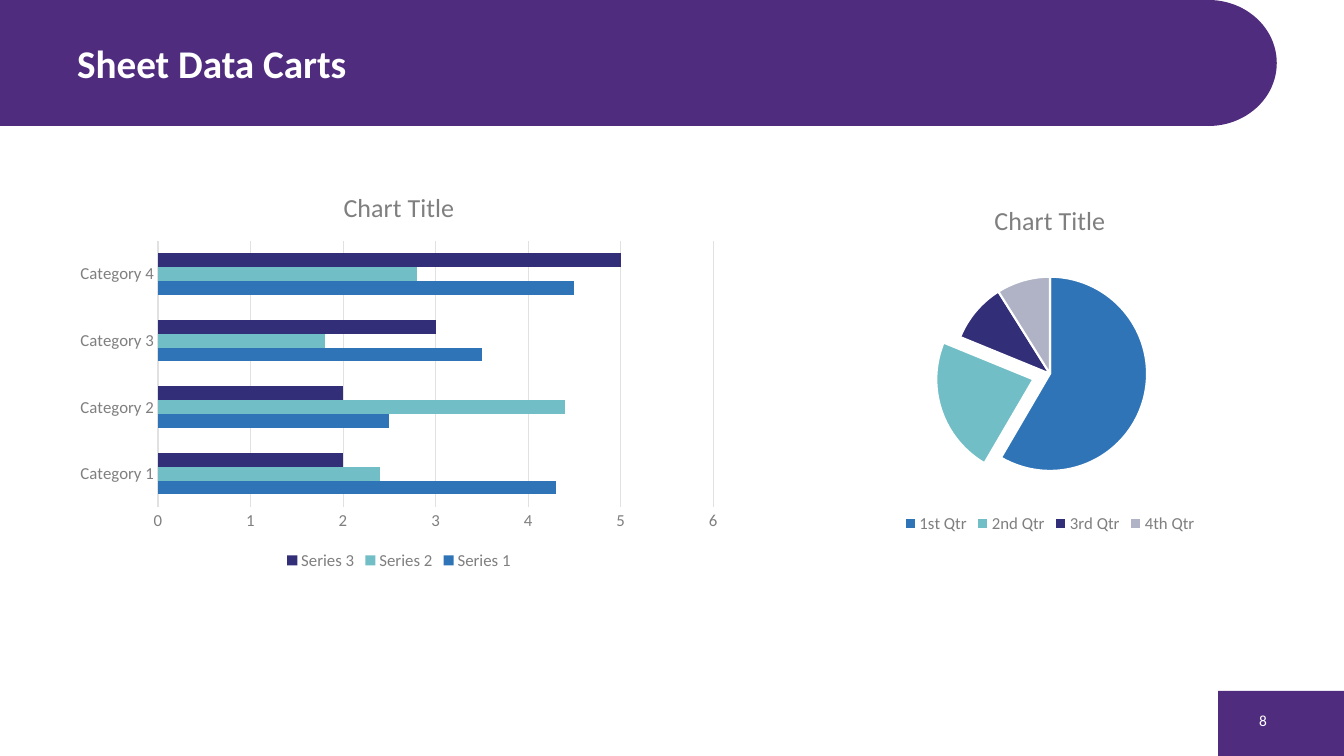
from lxml import etree
from pptx import Presentation
from pptx.chart.data import CategoryChartData
from pptx.dml.color import RGBColor
from pptx.enum.chart import XL_CHART_TYPE as ChartType
from pptx.enum.chart import XL_LEGEND_POSITION as LegendPosition
from pptx.enum.chart import XL_TICK_MARK as TickMark
from pptx.enum.shapes import MSO_SHAPE as Shape
from pptx.enum.text import MSO_ANCHOR as Anchor
from pptx.enum.text import PP_ALIGN as Align
from pptx.oxml.ns import qn
from pptx.util import Emu, Pt

PX = 9525
FONT = "Calibri"
COLORS = {
    "purple": "502C7F",
    "white": "FFFFFF",
    "gray": "7F7F7F",
    "grid": "E1E1E1",
    "blue": "2F74B7",
    "teal": "71BEC6",
    "navy": "322E78",
    "silver": "AFB3C5",
}
PALETTE = ("blue", "teal", "navy", "silver")


def px(*lengths):
    return [Emu(length * PX) for length in lengths]


def color(name):
    return RGBColor.from_string(COLORS[name])


def style_font(font, size, color_name, bold=False):
    values = {"name": FONT, "size": Pt(size), "bold": bold}
    for attribute, value in values.items():
        setattr(font, attribute, value)
    font.color.rgb = color(color_name)


def fill_format(item, color_name):
    item.fill.solid()
    item.fill.fore_color.rgb = color(color_name)


def style_line(line, color_name, width):
    line.color.rgb = color(color_name)
    line.width = Pt(width)


def add_block(slide, kind, box):
    shape = slide.shapes.add_shape(kind, *px(*box))
    shape.shadow.inherit = False
    fill_format(shape, "purple")
    shape.line.fill.background()


def add_label(slide, text, box, size, align, bold=False):
    frame = slide.shapes.add_textbox(*px(*box)).text_frame
    frame.word_wrap = True
    frame.vertical_anchor = Anchor.MIDDLE
    paragraph = frame.paragraphs[0]
    paragraph.text = text
    paragraph.alignment = align
    style_font(paragraph.font, size, "white", bold)


def add_header(slide, title, box):
    left, top, width, height = box
    cap = 130
    add_block(slide, Shape.RECTANGLE, (left, top, width - cap // 2, height))
    add_block(slide, Shape.OVAL, (left + width - cap, top, cap, height))
    add_label(slide, title, (left + 64, top + 8, 960, height - 16), 28, Align.LEFT, True)


def add_page_number(slide, number, box):
    left, top, width, height = box
    add_block(slide, Shape.RECTANGLE, box)
    add_label(slide, number, (left + 8, top + 9, 48, 38), 11, Align.RIGHT)


def add_titled_chart(slide, kind, categories, series, box):
    data = CategoryChartData()
    data.categories = categories
    for name, values in series.items():
        data.add_series(name, values)
    chart = slide.shapes.add_chart(kind, *px(*box), data).chart
    style_font(chart.font, 12, "gray")
    chart.has_title = True
    title = chart.chart_title
    title.include_in_layout = False
    paragraph = title.text_frame.paragraphs[0]
    paragraph.text = "Chart Title"
    style_font(paragraph.runs[0].font, 18.6, "gray")
    chart.has_legend = True
    chart.legend.position = LegendPosition.BOTTOM
    chart.legend.include_in_layout = False
    style_font(chart.legend.font, 12, "gray")
    return chart


def add_bar_chart(slide, box):
    categories = [f"Category {number}" for number in range(1, 5)]
    series = {
        "Series 1": (4.3, 2.5, 3.5, 4.5),
        "Series 2": (2.4, 4.4, 1.8, 2.8),
        "Series 3": (2, 2, 3, 5),
    }
    chart = add_titled_chart(slide, ChartType.BAR_CLUSTERED, categories, series, box)
    plot = chart.plots[0]
    plot.vary_by_categories = False
    plot.gap_width = 182
    for bars, name in zip(plot.series, PALETTE):
        fill_format(bars.format, name)
    for axis in (chart.category_axis, chart.value_axis):
        axis.major_tick_mark = axis.minor_tick_mark = TickMark.NONE
        style_font(axis.tick_labels.font, 12, "gray")
    style_line(chart.category_axis.format.line, "grid", 0.75)
    chart.value_axis.format.line.fill.background()
    chart.value_axis.has_major_gridlines = True
    style_line(chart.value_axis.major_gridlines.format.line, "grid", 0.75)
    chart.value_axis.tick_labels.number_format = "General"
    chart.value_axis.tick_labels.number_format_is_linked = False
    for attribute, value in {"minimum_scale": 0, "maximum_scale": 6, "major_unit": 1}.items():
        setattr(chart.value_axis, attribute, value)


def add_pie_chart(slide, box):
    categories = ("1st Qtr", "2nd Qtr", "3rd Qtr", "4th Qtr")
    series = {"Series 1": (59, 23, 10, 9)}
    chart = add_titled_chart(slide, ChartType.PIE, categories, series, box)
    pie = chart.plots[0].series[0]
    for index, name in enumerate(PALETTE):
        point_format = pie.points[index].format
        fill_format(point_format, name)
        style_line(point_format.line, "white", 1.5)
    second_slice = pie._element.findall(qn("c:dPt"))[1]
    explosion = etree.Element(qn("c:explosion"), val="18")
    second_slice.find(qn("c:spPr")).addprevious(explosion)


def main():
    """Build the data charts slide."""
    presentation = Presentation()
    presentation.slide_width, presentation.slide_height = px(1280, 720)
    slide = presentation.slides.add_slide(presentation.slide_layouts[6])
    add_header(slide, "Sheet Data Carts", (0, 0, 1216, 120))
    add_bar_chart(slide, (64, 163, 632, 384))
    add_pie_chart(slide, (760, 176, 480, 336))
    add_page_number(slide, "8", (1160, 658, 120, 62))
    presentation.save("out.pptx")


if __name__ == "__main__":
    main()
